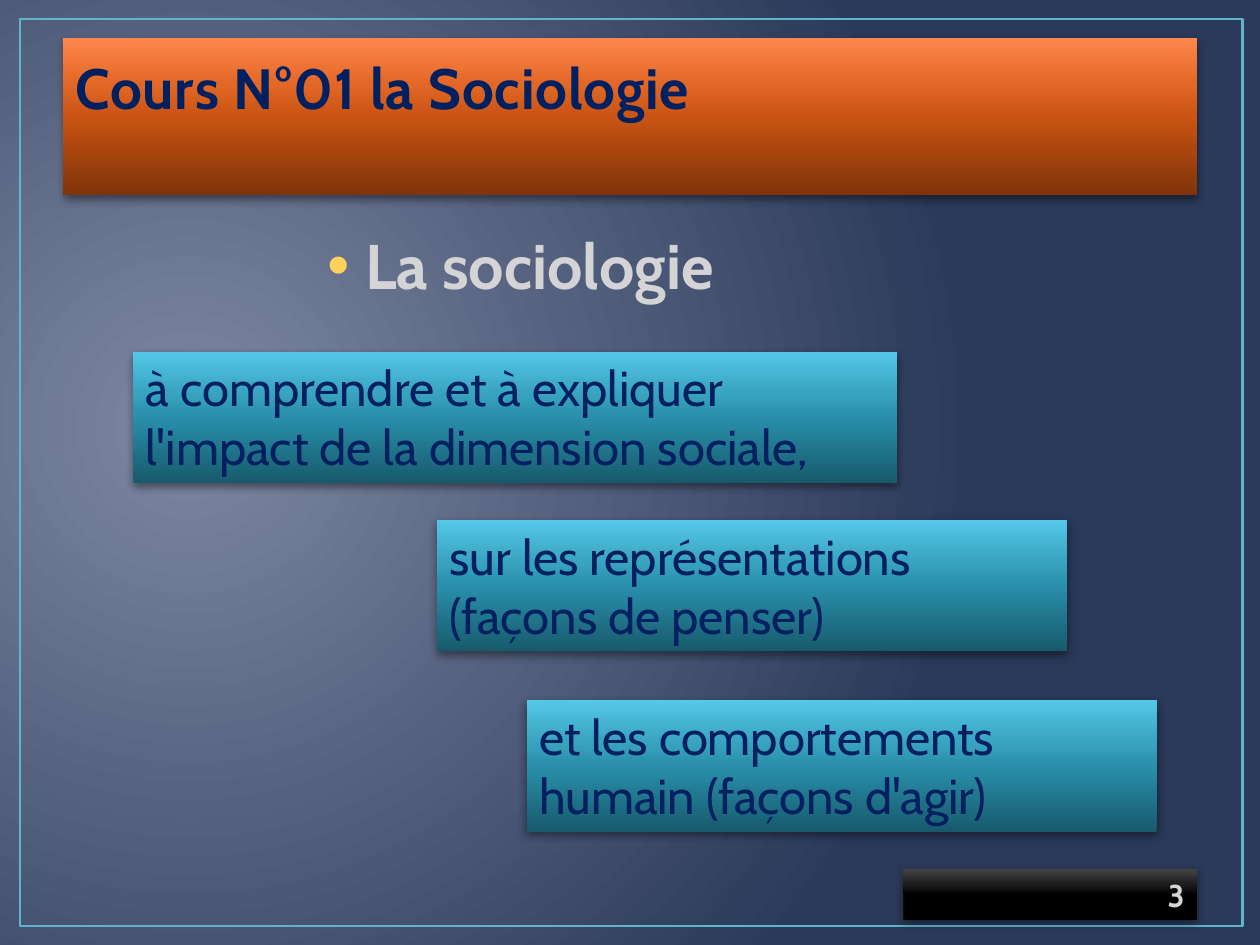
from typing import NamedTuple

from pptx import Presentation
from pptx import util as u
from pptx.dml.color import RGBColor
from pptx.enum import shapes, text
from pptx.oxml import parse_xml
from pptx.oxml.ns import nsdecls, qn

FONT = "Cabin"
NAVY = "002060"
PALE = "D4D4D6"
GOLD = "FFD25D"
UPWARD = '<a:lin ang="16200000" scaled="0"/>'
RADIAL = '<a:path path="circle"><a:fillToRect l="15000" t="50000" r="85000" b="60000"/></a:path>'
ORANGE = ((0, "803309"), (50, "C95414"), (70, "E26625"), (100, "FF874D"))
TEAL = ((0, "175A6C"), (50, "298FAB"), (70, "3AA5C2"), (100, "54C8E9"))
BLACK = ((0, "000000"), (50, "000000"), (70, "1D1D1D"), (100, "424242"))
NIGHT = ((0, "7E88A3"), (100, "2B395A"))


class Panel(NamedTuple):
    left: float
    top: float
    width: float
    height: float
    stops: tuple
    words: str
    style: dict


PANELS = (
    Panel(0.5, 0.3, 9, 1.25, ORANGE, "Cours N°01 la Sociologie",
          dict(size=32.4, bold=True, gap=0.5, inset=0.12)),
    Panel(1.06, 2.79, 6.06, 1.04, TEAL,
          "à comprendre et à expliquer l'impact de la dimension sociale,", dict(grow=True)),
    Panel(3.47, 4.13, 5, 1.04, TEAL,
          "sur les représentations (façons de penser)", dict(grow=True)),
    Panel(4.18, 5.56, 5, 1.04, TEAL,
          "et les comportements humain (façons d'agir)", dict(grow=True)),
    Panel(7.17, 6.9, 2.33, 0.4, BLACK, "3",
          dict(size=18, color=PALE, bold=True, align=text.PP_ALIGN.RIGHT,
               anchor=text.MSO_ANCHOR.MIDDLE)),
)


def tint(code: str) -> RGBColor:
    return RGBColor.from_string(code)


def blend(old, stops: tuple, shade: str) -> None:
    marks = "".join(f'<a:gs pos="{spot * 1000}"><a:srgbClr val="{code}"/></a:gs>'
                    for spot, code in stops)
    new = parse_xml(f'<a:gradFill {nsdecls("a")} rotWithShape="1">'
                    f'<a:gsLst>{marks}</a:gsLst>{shade}</a:gradFill>')
    old.getparent().replace(old, new)


def write(shape, words: str, size: float = 28, color: str = NAVY, bold: bool = False,
          align=text.PP_ALIGN.LEFT, anchor=text.MSO_ANCHOR.TOP, gap: float = 0,
          inset: float = 0.05, grow: bool = False, dot: str = "") -> None:
    frame = shape.text_frame
    frame.word_wrap = True
    frame.vertical_anchor = anchor
    frame.margin_top = u.Inches(inset)
    frame.auto_size = (text.MSO_AUTO_SIZE.SHAPE_TO_FIT_TEXT if grow
                       else text.MSO_AUTO_SIZE.NONE)
    para = frame.paragraphs[0]
    para.alignment = align
    run = para.add_run()
    run.text = words
    font = run.font
    font.name, font.size, font.bold = FONT, u.Pt(size), bold
    font.color.rgb = tint(color)
    if gap:
        run._r.get_or_add_rPr().set("spc", str(round(gap * 100)))
    if dot:
        props = para._p.get_or_add_pPr()
        props.set("marL", str(u.Inches(0.3)))
        props.set("indent", str(u.Inches(-0.3)))
        props.append(parse_xml(f'<a:buClr {nsdecls("a")}><a:srgbClr val="{dot}"/></a:buClr>'))
        props.append(parse_xml(f'<a:buFont {nsdecls("a")} typeface="Arial"/>'))
        props.append(parse_xml(f'<a:buChar {nsdecls("a")} char="•"/>'))


def block(slide, left: float, top: float, width: float, height: float):
    shape = slide.shapes.add_shape(shapes.MSO_SHAPE.RECTANGLE, u.Inches(left), u.Inches(top),
                                   u.Inches(width), u.Inches(height))
    shape.shadow.inherit = False
    shape.fill.background()
    return shape


def draw(slide, panel: Panel) -> None:
    shape = block(slide, *panel[:4])
    shape.line.fill.background()
    props = shape.element.spPr
    blend(props.find(qn("a:noFill")), panel.stops, UPWARD)
    props.find(qn("a:effectLst")).append(parse_xml(
        f'<a:outerShdw {nsdecls("a")} blurRad="{u.Pt(5)}" dist="{u.Pt(2)}" dir="5400000" '
        'rotWithShape="0"><a:srgbClr val="000000"><a:alpha val="43000"/></a:srgbClr>'
        '</a:outerShdw>'))
    write(shape, panel.words, **panel.style)


def main() -> None:
    deck = Presentation()
    deck.slide_width, deck.slide_height = u.Inches(10), u.Inches(7.5)
    slide = deck.slides.add_slide(deck.slide_layouts[6])
    slide.background.fill.solid()
    blend(slide.element.find(".//" + qn("p:bgPr"))[0], NIGHT, RADIAL)

    frame = block(slide, 0.16, 0.15, 9.7, 7.2)
    frame.line.color.rgb = tint("60B5CC")
    frame.line.width = u.Pt(1.5)

    head, *rest = PANELS
    draw(slide, head)
    topic = slide.shapes.add_textbox(u.Inches(2.5), u.Inches(1.75),
                                     u.Inches(6.68), u.Inches(0.74))
    write(topic, "La sociologie", size=36, color=PALE, bold=True, dot=GOLD)
    for panel in rest:
        draw(slide, panel)
    deck.save("out.pptx")


if __name__ == "__main__":
    main()
